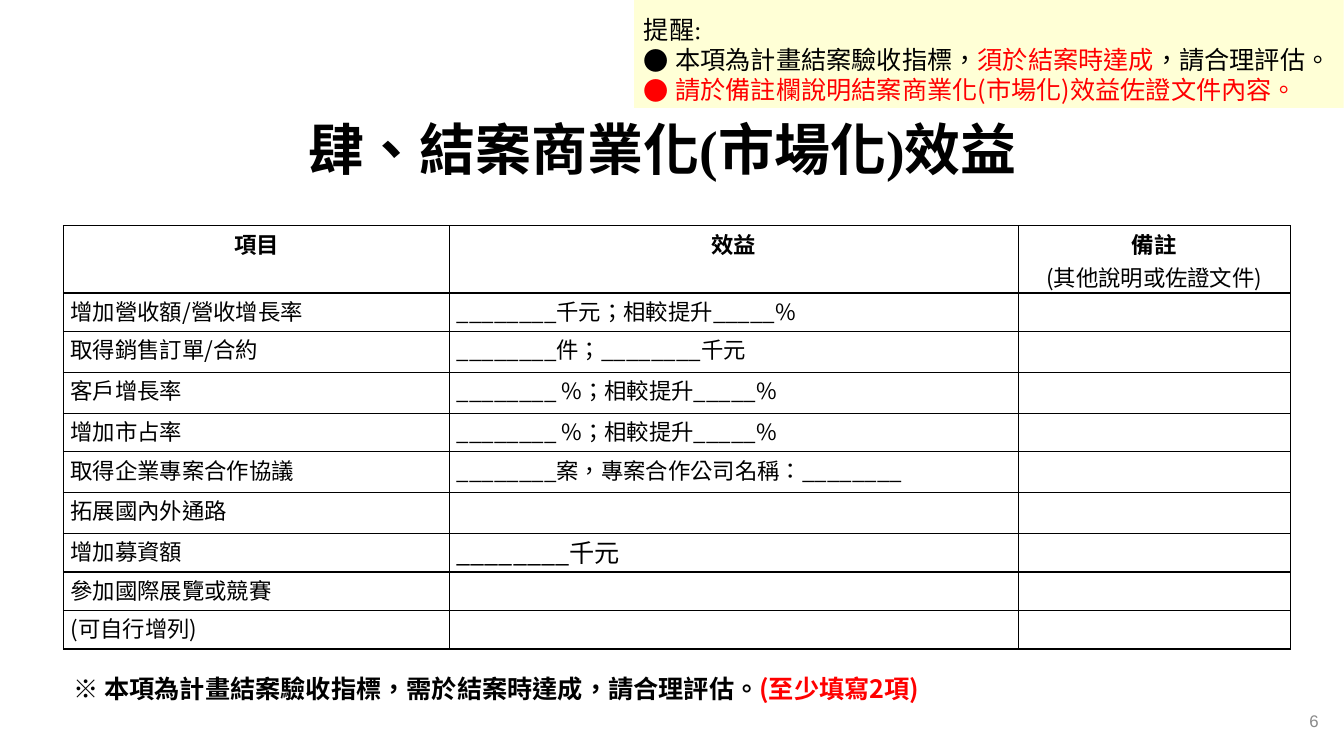
from dataclasses import dataclass

from lxml.etree import SubElement
from pptx import Presentation
from pptx.dml.color import RGBColor
from pptx.enum.lang import MSO_LANGUAGE_ID
from pptx.enum.shapes import MSO_SHAPE
from pptx.enum.text import MSO_ANCHOR, MSO_AUTO_SIZE, PP_ALIGN
from pptx.oxml.ns import qn
from pptx.util import Cm, Pt


@dataclass(frozen=True)
class Theme:
    ink: RGBColor = RGBColor(0, 0, 0)
    alert: RGBColor = RGBColor(0xFF, 0, 0)
    muted: RGBColor = RGBColor(0x89, 0x89, 0x89)
    paper: RGBColor = RGBColor(0xFF, 0xFF, 0xFF)
    reminder: RGBColor = RGBColor(0xFF, 0xFF, 0xCC)
    serif: str = "Times New Roman"
    sans: str = "Noto Sans CJK SC"
    number: str = "Arial"
    title_size: Pt = Pt(40)
    body_size: Pt = Pt(18)
    table_size: Pt = Pt(16)
    number_size: Pt = Pt(12)
    table_spacing: Pt = Pt(24)


THEME = Theme()
COLUMN_WIDTHS = (9.73, 14.33, 6.86)
ROW_HEIGHTS = (1.69, 0.97, 1.03, 1.03, 0.97, 1.03, 1.03, 0.97, 0.97, 0.97)
HEADINGS = ("項目", "效益", "備註")
REMARK_HINT = "(其他說明或佐證文件)"
FUNDING = "增加募資額"
BENEFITS = (
    ("增加營收額/營收增長率", "________千元；相較提升_____%"),
    ("取得銷售訂單/合約", "________件；________千元"),
    ("客戶增長率", "________ %；相較提升_____%"),
    ("增加市占率", "________ %；相較提升_____%"),
    ("取得企業專案合作協議", "________案，專案合作公司名稱：________"),
    ("拓展國內外通路", ""),
    (FUNDING, "________千元"),
    ("參加國際展覽或競賽", ""),
    ("(可自行增列)", ""),
)


def apply(target, formats):
    for name, value in formats.items():
        setattr(target, name, value)


def add_run(paragraph, text, color=THEME.ink, **formats):
    run = paragraph.add_run()
    run.text = text
    run.font.color.rgb = color
    defaults = {"name": THEME.sans, "size": THEME.body_size,
                "language_id": MSO_LANGUAGE_ID.TRADITIONAL_CHINESE}
    apply(run.font, defaults | formats)
    east_asian = SubElement(run.font._element, qn("a:ea"))
    east_asian.set("typeface", THEME.sans)


def add_bullet(paragraph, color):
    properties = paragraph._p.get_or_add_pPr()
    properties.set("marL", str(Cm(0.79)))
    properties.set("indent", str(-Cm(0.79)))
    bullet_color = SubElement(properties, qn("a:buClr"))
    SubElement(bullet_color, qn("a:srgbClr")).set("val", str(color))
    SubElement(properties, qn("a:buFont")).set("typeface", THEME.sans)
    SubElement(properties, qn("a:buChar")).set("char", "●")


def add_title(slide):
    title = slide.shapes.title
    apply(title, {"left": Cm(1.45), "top": Cm(2.39),
                  "width": Cm(30.48), "height": Cm(2.67)})
    apply(title.text_frame, {"auto_size": MSO_AUTO_SIZE.NONE,
                             "vertical_anchor": MSO_ANCHOR.MIDDLE})
    heading = title.text_frame.paragraphs[0]
    heading.alignment = PP_ALIGN.CENTER
    add_run(heading, "肆、結案商業化(市場化)效益", name=THEME.serif,
            size=THEME.title_size, bold=True)


def add_text_line(slide, box, anchor=MSO_ANCHOR.TOP, alignment=PP_ALIGN.LEFT):
    frame = slide.shapes.add_textbox(*map(Cm, box)).text_frame
    apply(frame, {"word_wrap": True, "vertical_anchor": anchor})
    line = frame.paragraphs[0]
    line.alignment = alignment
    return line


def add_borders(cell):
    properties = cell._tc.get_or_add_tcPr()
    for side in ("lnL", "lnR", "lnT", "lnB"):
        border = SubElement(properties, qn(f"a:{side}"), w=str(Pt(1)))
        fill = SubElement(border, qn("a:solidFill"))
        SubElement(fill, qn("a:srgbClr")).set("val", str(THEME.ink))


def format_cell(cell):
    apply(cell, {"margin_left": Cm(0.18), "margin_right": Cm(0.18),
                 "margin_top": 0, "margin_bottom": 0})
    add_borders(cell)
    cell.fill.solid()
    cell.fill.fore_color.rgb = THEME.paper
    cell.text_frame.paragraphs[0].line_spacing = THEME.table_spacing


def add_benefit_table(slide):
    table = slide.shapes.add_table(
        len(ROW_HEIGHTS), len(COLUMN_WIDTHS), Cm(1.6), Cm(5.69),
        Cm(sum(COLUMN_WIDTHS)), Cm(sum(ROW_HEIGHTS))).table
    apply(table, {"first_row": False, "horz_banding": False})
    for column, width in zip(table.columns, COLUMN_WIDTHS):
        column.width = Cm(width)
    for row, height in zip(table.rows, ROW_HEIGHTS):
        row.height = Cm(height)
    for cell in table.iter_cells():
        format_cell(cell)

    for column, heading in enumerate(HEADINGS):
        label = table.cell(0, column).text_frame.paragraphs[0]
        label.alignment = PP_ALIGN.CENTER
        add_run(label, heading, size=THEME.table_size, bold=True)
    hint = table.cell(0, 2).text_frame.add_paragraph()
    apply(hint, {"alignment": PP_ALIGN.CENTER,
                 "line_spacing": THEME.table_spacing})
    add_run(hint, REMARK_HINT, size=THEME.table_size)

    for row, (item, benefit) in enumerate(BENEFITS, start=1):
        item_line, benefit_line = (
            table.cell(row, column).text_frame.paragraphs[0]
            for column in (0, 1))
        add_run(item_line, item, size=THEME.table_size)
        if item == FUNDING:
            benefit_line.line_spacing = None
            add_run(benefit_line, benefit)
        elif benefit:
            add_run(benefit_line, benefit, size=THEME.table_size)


def add_reminder(slide):
    reminder = slide.shapes.add_shape(
        MSO_SHAPE.RECTANGLE, Cm(15.98), 0, Cm(17.88), Cm(2.72))
    reminder.shadow.inherit = False
    reminder.line.fill.background()
    reminder.fill.solid()
    reminder.fill.fore_color.rgb = THEME.reminder
    tint = reminder._element.spPr.find(
        f"{qn('a:solidFill')}/{qn('a:srgbClr')}")
    SubElement(tint, qn("a:alpha")).set("val", "80000")

    frame = reminder.text_frame
    apply(frame, {"word_wrap": True, "vertical_anchor": MSO_ANCHOR.TOP})
    heading = frame.paragraphs[0]
    apply(heading, {"alignment": PP_ALIGN.LEFT, "line_spacing": Pt(28)})
    add_run(heading, "提醒:", name=THEME.serif)
    points = (
        (("本項為計畫結案驗收指標，", THEME.ink),
         ("須於結案時達成", THEME.alert),
         ("，請合理評估。", THEME.ink)),
        (("請於備註欄說明結案商業化(市場化)效益佐證文件內容。", THEME.alert),),
    )
    for parts in points:
        point = frame.add_paragraph()
        apply(point, {"alignment": PP_ALIGN.LEFT, "line_spacing": Pt(21.5)})
        add_bullet(point, parts[0][1])
        for text, color in parts:
            add_run(point, text, color)


def main():
    deck = Presentation()
    apply(deck, {"slide_width": Cm(33.87), "slide_height": Cm(19.05)})
    slide = deck.slides.add_slide(deck.slide_layouts.get_by_name("Title Only"))
    add_title(slide)
    note = add_text_line(slide, (1.6, 16.84, 30.48, 1.12))
    add_run(note, "※ 本項為計畫結案驗收指標，需於結案時達成，請合理評估。", bold=True)
    add_run(note, "(至少填寫2項)", THEME.alert, bold=True)
    page = add_text_line(slide, (25.58, 17.65, 7.9, 1.02),
                         MSO_ANCHOR.MIDDLE, PP_ALIGN.RIGHT)
    add_run(page, "6", THEME.muted, name=THEME.number, size=THEME.number_size)
    add_benefit_table(slide)
    add_reminder(slide)
    deck.save("out.pptx")


if __name__ == "__main__":
    main()
